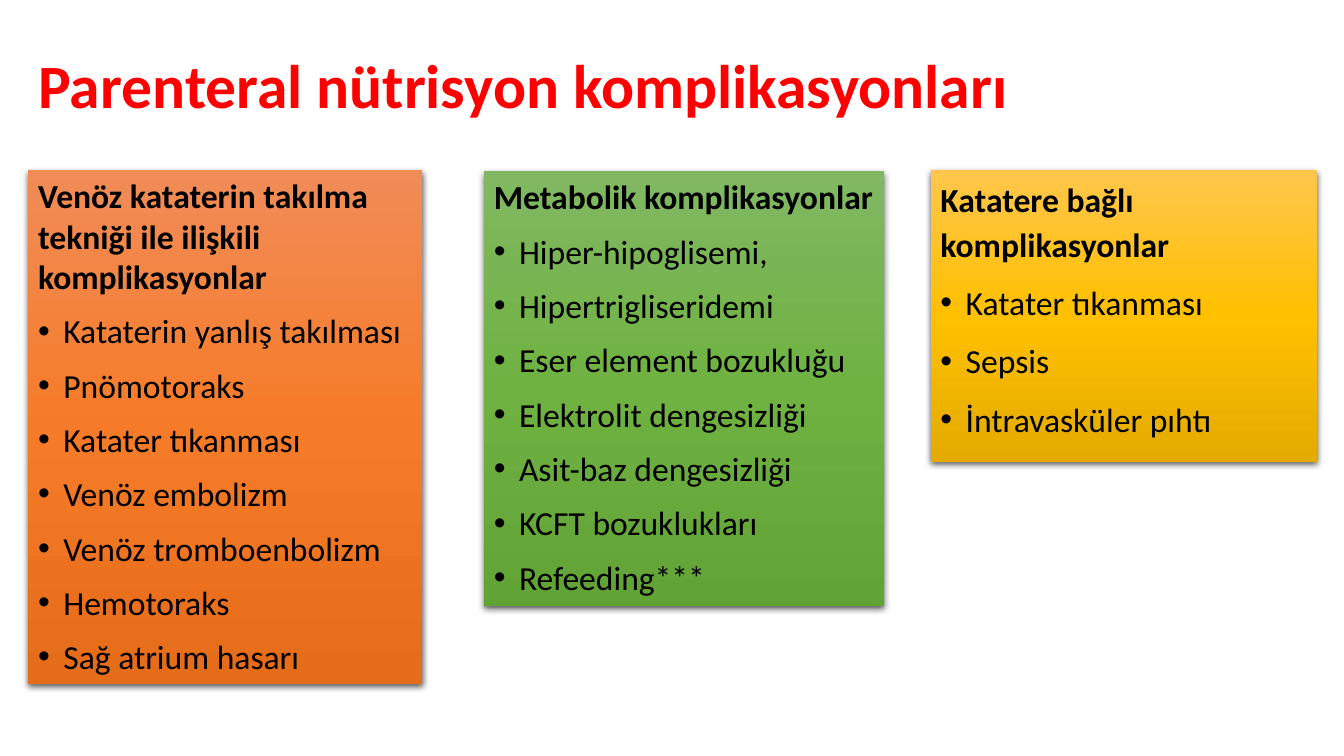
import copy

import pptx
import pptx.dml.color
import pptx.enum.shapes
import pptx.enum.text
import pptx.oxml
import pptx.oxml.ns
import pptx.util

PX = 9144  # EMU per px, 100 px to the inch
SLIDE_SIZE = (1333, 750)
FONT = "Calibri"
INDENT = 25

TITLE = "Parenteral nütrisyon komplikasyonları"
TITLE_BOX = (28, 15, 1150, 145)

PANELS = [
    {
        "box": (28, 169, 391, 510),
        "gradient": ("F18C57", "F67B28", "E56C19"),
        "line_spacing": 1.0,
        "grows": False,
        "heading": "Venöz kataterin takılma tekniği ile ilişkili komplikasyonlar",
        "items": ["Kataterin yanlış takılması", "Pnömotoraks", "Katater tıkanması",
                  "Venöz embolizm", "Venöz tromboenbolizm", "Hemotoraks",
                  "Sağ atrium hasarı"],
    },
    {
        "box": (480, 170, 397, 431),
        "gradient": ("81B861", "6FB242", "62A336"),
        "line_spacing": 1.0,
        "grows": True,
        "heading": "Metabolik komplikasyonlar",
        "items": ["Hiper-hipoglisemi,", "Hipertrigliseridemi",
                  "Eser element bozukluğu", "Elektrolit dengesizliği",
                  "Asit-baz dengesizliği", "KCFT bozuklukları", "Refeeding***"],
    },
    {
        "box": (923, 169, 383, 289),
        "gradient": ("FFC64B", "FFC000", "E3AB00"),
        "line_spacing": 1.1,
        "grows": False,
        "heading": "Katatere bağlı komplikasyonlar",
        "items": ["Katater tıkanması", "Sepsis", "İntravasküler pıhtı"],
    },
]

SHADOW = (
    f'<a:outerShdw {pptx.oxml.ns.nsdecls("a")} blurRad="57150" dist="19050" '
    'dir="5400000" algn="ctr" rotWithShape="0"><a:srgbClr val="000000">'
    '<a:alpha val="63000"/></a:srgbClr></a:outerShdw>'
)


def emu(box):
    return [length * PX for length in box]


def rgb(colour):
    return pptx.dml.color.RGBColor.from_string(colour)


def add_run(paragraph, text, size, colour, bold):
    run = paragraph.add_run()
    run.text = text
    run.font.name = FONT
    run.font.size = pptx.util.Pt(size)
    run.font.bold = bold
    run.font.color.rgb = rgb(colour)


def fill_gradient(shape, colours):
    """Fill from top to bottom with evenly spaced colours."""
    shape.fill.gradient()
    shape.fill.gradient_angle = 270
    stop_list = shape._element.spPr.find(".//" + pptx.oxml.ns.qn("a:gsLst"))
    while len(stop_list) < len(colours):
        stop_list.append(copy.deepcopy(stop_list[-1]))
    for i, (stop, colour) in enumerate(zip(shape.fill.gradient_stops, colours)):
        stop.position = i / (len(colours) - 1)
        stop.color.rgb = rgb(colour)


def add_shadow(shape):
    shape.shadow.inherit = False
    effects = shape._element.spPr.find(pptx.oxml.ns.qn("a:effectLst"))
    effects.append(pptx.oxml.parse_xml(SHADOW))


def add_bullet(paragraph):
    properties = paragraph._p.get_or_add_pPr()
    properties.set("marL", str(INDENT * PX))
    properties.set("indent", str(-INDENT * PX))
    namespace = pptx.oxml.ns.nsdecls("a")
    properties.append(pptx.oxml.parse_xml(f'<a:buFont {namespace} typeface="Arial"/>'))
    properties.append(pptx.oxml.parse_xml(f'<a:buChar {namespace} char="•"/>'))


def add_panel(slide, panel):
    shape = slide.shapes.add_shape(
        pptx.enum.shapes.MSO_SHAPE.RECTANGLE, *emu(panel["box"]))
    fill_gradient(shape, panel["gradient"])
    shape.line.fill.background()
    add_shadow(shape)

    frame = shape.text_frame
    frame.word_wrap = True
    frame.vertical_anchor = pptx.enum.text.MSO_ANCHOR.TOP
    fit = pptx.enum.text.MSO_AUTO_SIZE
    frame.auto_size = fit.SHAPE_TO_FIT_TEXT if panel["grows"] else fit.NONE
    for i, text in enumerate([panel["heading"], *panel["items"]]):
        paragraph = frame.add_paragraph() if i else frame.paragraphs[0]
        paragraph.alignment = pptx.enum.text.PP_ALIGN.LEFT
        paragraph.line_spacing = panel["line_spacing"]
        if i:
            paragraph.space_before = pptx.util.Pt(10)
            add_bullet(paragraph)
        add_run(paragraph, text, 24, "000000", bold=i == 0)


def add_title(slide):
    title = slide.shapes.title
    title.left, title.top, title.width, title.height = emu(TITLE_BOX)
    frame = title.text_frame
    frame.word_wrap = True
    frame.auto_size = pptx.enum.text.MSO_AUTO_SIZE.NONE
    frame.vertical_anchor = pptx.enum.text.MSO_ANCHOR.MIDDLE
    paragraph = frame.paragraphs[0]
    paragraph.alignment = pptx.enum.text.PP_ALIGN.LEFT
    paragraph.line_spacing = 0.9
    add_run(paragraph, TITLE, 44, "FF0000", bold=True)


def main():
    deck = pptx.Presentation()
    deck.slide_width, deck.slide_height = emu(SLIDE_SIZE)
    slide = deck.slides.add_slide(deck.slide_layouts[5])
    add_title(slide)
    for panel in PANELS:
        add_panel(slide, panel)
    deck.save("out.pptx")


if __name__ == "__main__":
    main()
